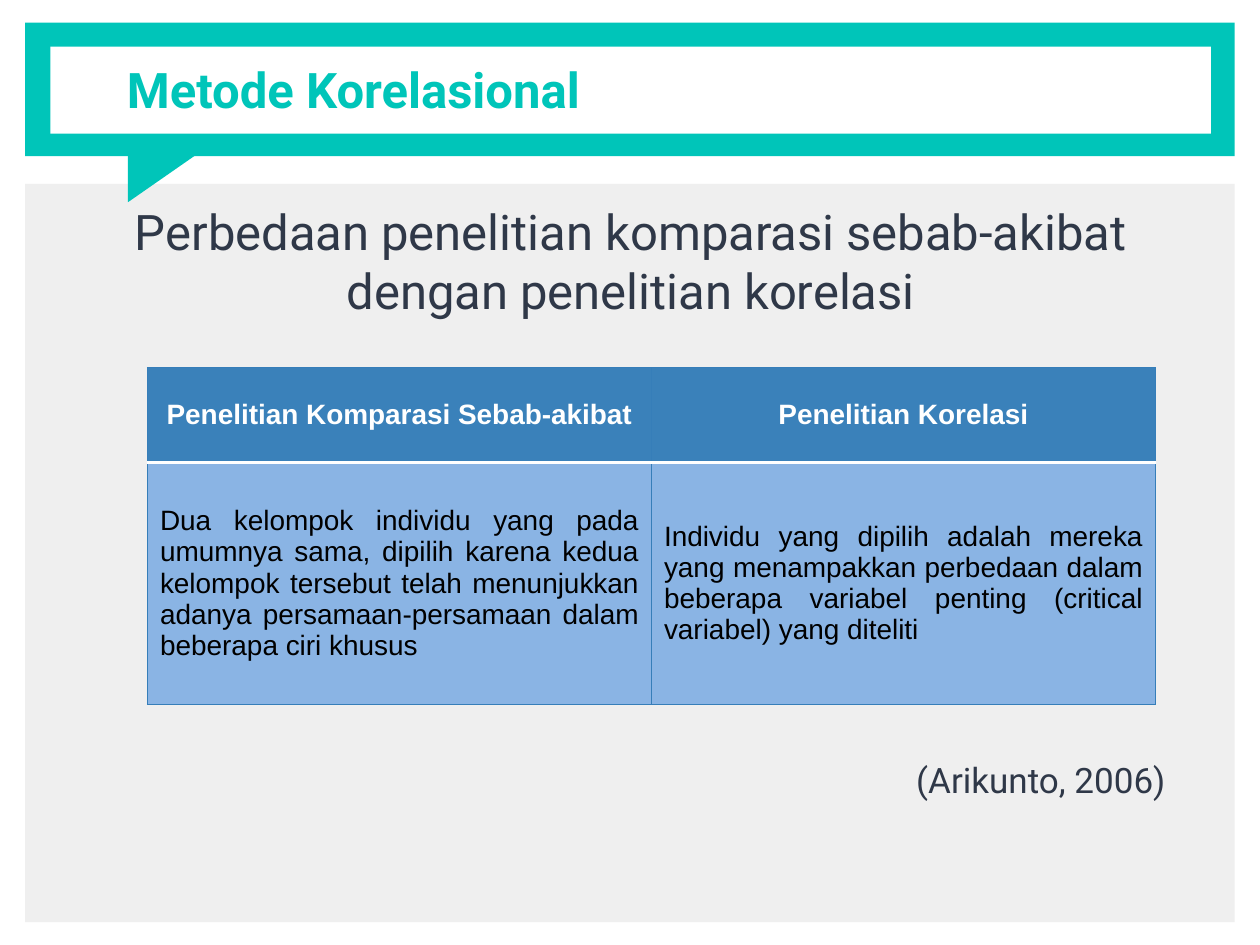
from dataclasses import dataclass

import lxml.etree
import pptx
import pptx.dml.color
import pptx.enum.shapes
import pptx.enum.text
import pptx.oxml.ns
import pptx.util

Inches = pptx.util.Inches
Pt = pptx.util.Pt
Kind = pptx.enum.shapes.MSO_SHAPE
Align = pptx.enum.text.PP_ALIGN
Anchor = pptx.enum.text.MSO_ANCHOR

TEAL, GREY, WHITE, BLACK = "00C5B9", "EFEFEF", "FFFFFF", "000000"
INK, BLUE, LIGHT, EDGE = "2F3848", "3A81BA", "8AB4E4", "367EB9"


@dataclass(frozen=True)
class Box:
    left: float
    top: float
    width: float
    height: float

    def place(self) -> tuple:
        return tuple(Inches(n) for n in (self.left, self.top, self.width, self.height))


@dataclass(frozen=True)
class Panel:
    box: Box
    fill: str
    kind: Kind = Kind.RECTANGLE
    turn: int = 0


@dataclass(frozen=True)
class Label:
    text: str
    box: Box
    size: int
    color: str = INK
    bold: bool = False
    align: Align = Align.LEFT
    anchor: Anchor = Anchor.TOP


@dataclass(frozen=True)
class Row:
    texts: tuple
    height: float
    fill: str
    color: str
    bold: bool
    align: Align
    edges: dict


PANELS = (
    Panel(Box(0.2, 1.46, 9.6, 5.86), GREY),
    Panel(Box(0.2, 0.18, 9.6, 1.06), TEAL),
    Panel(Box(1.12, 1.02, 0.48, 0.69), TEAL, Kind.RIGHT_TRIANGLE, 90),
    Panel(Box(0.4, 0.37, 9.21, 0.69), WHITE),
)

LABELS = (
    Label("Metode Korelasional", Box(0.91, 0.18, 8.7, 1.06), 28,
          TEAL, bold=True, anchor=Anchor.MIDDLE),
    Label("Perbedaan penelitian komparasi sebab-akibat dengan penelitian korelasi",
          Box(0.83, 1.5, 8.35, 0.67), 28, align=Align.CENTER),
    Label("(Arikunto, 2006)", Box(1, 5.92, 8.35, 0.67), 20, align=Align.RIGHT),
)

THIN, THICK = (EDGE, 0.75), (WHITE, 2)
ROWS = (
    Row(("Penelitian Komparasi Sebab-akibat", "Penelitian Korelasi"),
        0.75, BLUE, WHITE, True, Align.CENTER,
        {"lnL": THIN, "lnR": THIN, "lnT": THIN, "lnB": THICK}),
    Row(("Dua kelompok individu yang pada umumnya sama, dipilih karena kedua "
         "kelompok tersebut telah menunjukkan adanya persamaan-persamaan dalam "
         "beberapa ciri khusus",
         "Individu yang dipilih adalah mereka yang menampakkan perbedaan dalam "
         "beberapa variabel penting (critical variabel) yang diteliti"),
        1.92, LIGHT, BLACK, False, Align.JUSTIFY,
        {"lnL": THIN, "lnR": THIN, "lnT": THICK, "lnB": THIN}),
)


def paint(fill, color: str) -> None:
    fill.solid()
    fill.fore_color.rgb = pptx.dml.color.RGBColor.from_string(color)


def write(frame, text: str, *, font: str, size: int, color: str,
          bold: bool, align: Align) -> None:
    line = frame.paragraphs[0]
    line.alignment = align
    run = line.add_run()
    run.text = text
    run.font.name = font
    run.font.size = Pt(size)
    run.font.bold = bold
    paint(run.font.fill, color)


def draw_panel(slide, panel: Panel) -> None:
    shape = slide.shapes.add_shape(panel.kind, *panel.box.place())
    shape.rotation = panel.turn
    shape.shadow.inherit = False
    paint(shape.fill, panel.fill)
    shape.line.fill.background()


def draw_label(slide, label: Label) -> None:
    frame = slide.shapes.add_textbox(*label.box.place()).text_frame
    frame.word_wrap = True
    frame.vertical_anchor = label.anchor
    frame.margin_left = frame.margin_right = Inches(0.1)
    frame.margin_top = frame.margin_bottom = Inches(0.1)
    write(frame, label.text, font="Roboto", size=label.size, color=label.color,
          bold=label.bold, align=label.align)


def draw_edges(cell, edges: dict) -> None:
    qn = pptx.oxml.ns.qn
    props = cell._tc.get_or_add_tcPr()
    for spot, (side, (color, width)) in enumerate(edges.items()):
        line = lxml.etree.Element(qn(f"a:{side}"), w=str(int(Pt(width))))
        fill = lxml.etree.SubElement(line, qn("a:solidFill"))
        lxml.etree.SubElement(fill, qn("a:srgbClr"), val=color)
        props.insert(spot, line)


def draw_table(slide, box: Box, rows: tuple) -> None:
    table = slide.shapes.add_table(len(rows), len(rows[0].texts), *box.place()).table
    for y, row in enumerate(rows):
        table.rows[y].height = Inches(row.height)
        for x, text in enumerate(row.texts):
            cell = table.cell(y, x)
            cell.vertical_anchor = Anchor.MIDDLE
            paint(cell.fill, row.fill)
            draw_edges(cell, row.edges)
            write(cell.text_frame, text, font="Arial", size=16, color=row.color,
                  bold=row.bold, align=row.align)


def main() -> None:
    deck = pptx.Presentation()
    deck.slide_width, deck.slide_height = Inches(10), Inches(7.5)
    slide = deck.slides.add_slide(deck.slide_layouts[6])
    for panel in PANELS:
        draw_panel(slide, panel)
    for label in LABELS:
        draw_label(slide, label)
    draw_table(slide, Box(1.17, 2.92, 8, 2.67), ROWS)
    deck.save("out.pptx")


if __name__ == "__main__":
    main()
